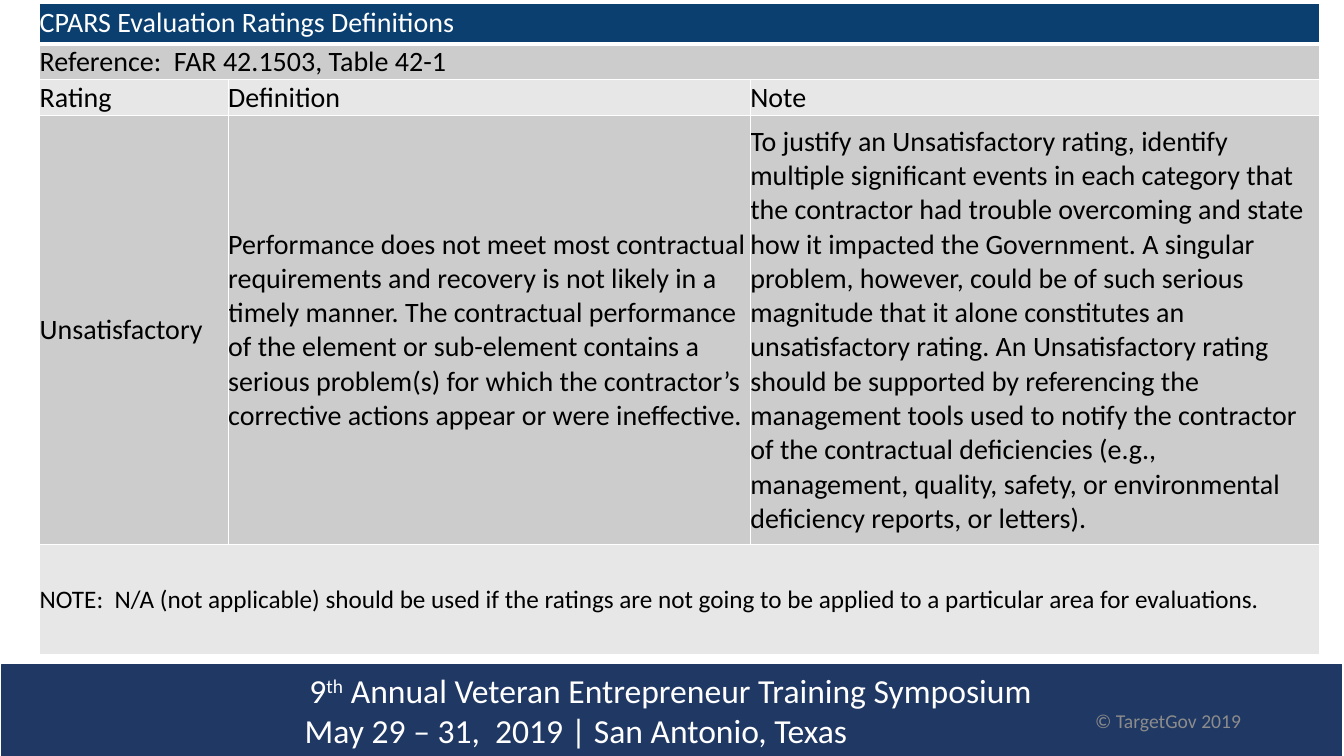
import pptx
import pptx.util
import pptx.dml.color
import pptx.enum.shapes
import pptx.enum.text
import pptx.oxml
import pptx.oxml.ns

Cm = pptx.util.Cm
Pt = pptx.util.Pt
RGBColor = pptx.dml.color.RGBColor
MIDDLE = pptx.enum.text.MSO_ANCHOR.MIDDLE
LEFT = pptx.enum.text.PP_ALIGN.LEFT

WHITE = RGBColor(0xFF, 0xFF, 0xFF)
BLACK = RGBColor(0, 0, 0)
TITLE_BLUE = RGBColor(0x0A, 0x3F, 0x70)
BANNER_BLUE = RGBColor(0x20, 0x38, 0x64)
DARK_BAND = RGBColor(0xCC, 0xCC, 0xCC)
LIGHT_BAND = RGBColor(0xE7, 0xE7, 0xE7)
COPYRIGHT_GREY = RGBColor(0x8C, 0x8C, 0x8C)

COLUMN_WIDTHS = (4.75, 13.16, 14.35)

# Row height, fill, text colour, text size, bottom border, texts (one text spans the row)
RATING_ROWS = [
    (1.02, TITLE_BLUE, WHITE, 20, 3, ["CPARS Evaluation Ratings Definitions"]),
    (0.91, DARK_BAND, BLACK, 20, 1, ["Reference:  FAR 42.1503, Table 42-1"]),
    (0.91, LIGHT_BAND, BLACK, 20, 1, ["Rating", "Definition", "Note"]),
    (10.8, DARK_BAND, BLACK, 20, 1, [
        "Unsatisfactory",
        "Performance does not meet most contractual requirements and recovery is not "
        "likely in a timely manner. The contractual performance of the element or "
        "sub-element contains a serious problem(s) for which the contractor’s "
        "corrective actions appear or were ineffective.",
        "To justify an Unsatisfactory rating, identify multiple significant events in "
        "each category that the contractor had trouble overcoming and state how it "
        "impacted the Government. A singular problem, however, could be of such serious "
        "magnitude that it alone constitutes an unsatisfactory rating. An Unsatisfactory "
        "rating should be supported by referencing the management tools used to notify "
        "the contractor of the contractual deficiencies (e.g., management, quality, "
        "safety, or environmental deficiency reports, or letters).",
    ]),
    (2.77, LIGHT_BAND, BLACK, 18, 1, [
        "NOTE:  N/A (not applicable) should be used if the ratings are not going to be "
        "applied to a particular area for evaluations."]),
]


def add_text(paragraph, text, size=20, color=BLACK, superscript=False):
    run = paragraph.add_run()
    run.text = text
    run.font.name = "Calibri"
    run.font.size = Pt(size)
    run.font.color.rgb = color
    if superscript:
        run.font._element.set("baseline", "30000")


def set_borders(cell, bottom):
    properties = cell._tc.get_or_add_tcPr()
    for side, width in (("L", 1), ("R", 1), ("T", 1), ("B", bottom)):
        properties.append(pptx.oxml.parse_xml(
            f'<a:ln{side} {pptx.oxml.ns.nsdecls("a")} w="{Pt(width)}">'
            f'<a:solidFill><a:srgbClr val="{WHITE}"/></a:solidFill></a:ln{side}>'))


def add_ratings_table(slide, left, top, width, height):
    ratings = slide.shapes.add_table(
        len(RATING_ROWS), len(COLUMN_WIDTHS), left, top, width, height).table
    for column, column_width in zip(ratings.columns, COLUMN_WIDTHS):
        column.width = Cm(column_width)
    for index, (row_height, fill, color, size, bottom, texts) in enumerate(RATING_ROWS):
        row = ratings.rows[index]
        row.height = Cm(row_height)
        for cell in row.cells:
            cell.margin_left = cell.margin_right = 0
            cell.margin_top = cell.margin_bottom = 0
            cell.vertical_anchor = MIDDLE
            set_borders(cell, bottom)
            cell.fill.solid()
            cell.fill.fore_color.rgb = fill
        if len(texts) == 1:
            ratings.cell(index, 0).merge(ratings.cell(index, len(COLUMN_WIDTHS) - 1))
        for cell, text in zip(row.cells, texts):
            add_text(cell.text_frame.paragraphs[0], text, size=size, color=color)


def add_banner(slide, left, top, width, height):
    banner = slide.shapes.add_shape(
        pptx.enum.shapes.MSO_SHAPE.RECTANGLE, left, top, width, height)
    banner.shadow.inherit = False
    banner.fill.solid()
    banner.fill.fore_color.rgb = BANNER_BLUE
    banner.line.color.rgb = BANNER_BLUE
    banner.line.width = Pt(1)

    # Event name and date
    event = banner.text_frame
    event.word_wrap = True
    event.vertical_anchor = MIDDLE
    name, date = event.paragraphs[0], event.add_paragraph()
    for paragraph, indent in ((name, 7.5), (date, 7.38)):
        paragraph.alignment = LEFT
        paragraph._p.get_or_add_pPr().set("marL", str(Cm(indent)))
    add_text(name, "9", size=24, color=WHITE)
    add_text(name, "th", size=24, color=WHITE, superscript=True)
    add_text(name, " Annual Veteran Entrepreneur Training Symposium", size=24, color=WHITE)
    add_text(date, "May 29 – 31,  2019 | San Antonio, Texas", size=24, color=WHITE)

    # Copyright line
    rights = slide.shapes.add_textbox(
        left + Cm(27.3), top + Cm(1.02), Cm(5.64), Cm(0.81)).text_frame
    rights.word_wrap = True
    rights.vertical_anchor = MIDDLE
    add_text(rights.paragraphs[0], "© TargetGov 2019", size=14, color=COPYRIGHT_GREY)


def main():
    deck = pptx.Presentation()
    deck.slide_width, deck.slide_height = Cm(33.87), Cm(19.05)
    slide = deck.slides.add_slide(deck.slide_layouts[6])
    add_banner(slide, Cm(0.05), Cm(16.74), Cm(33.76), Cm(2.31))
    add_ratings_table(slide, Cm(1), Cm(0.08), Cm(32.26), Cm(16.41))
    deck.save("out.pptx")


if __name__ == "__main__":
    main()
